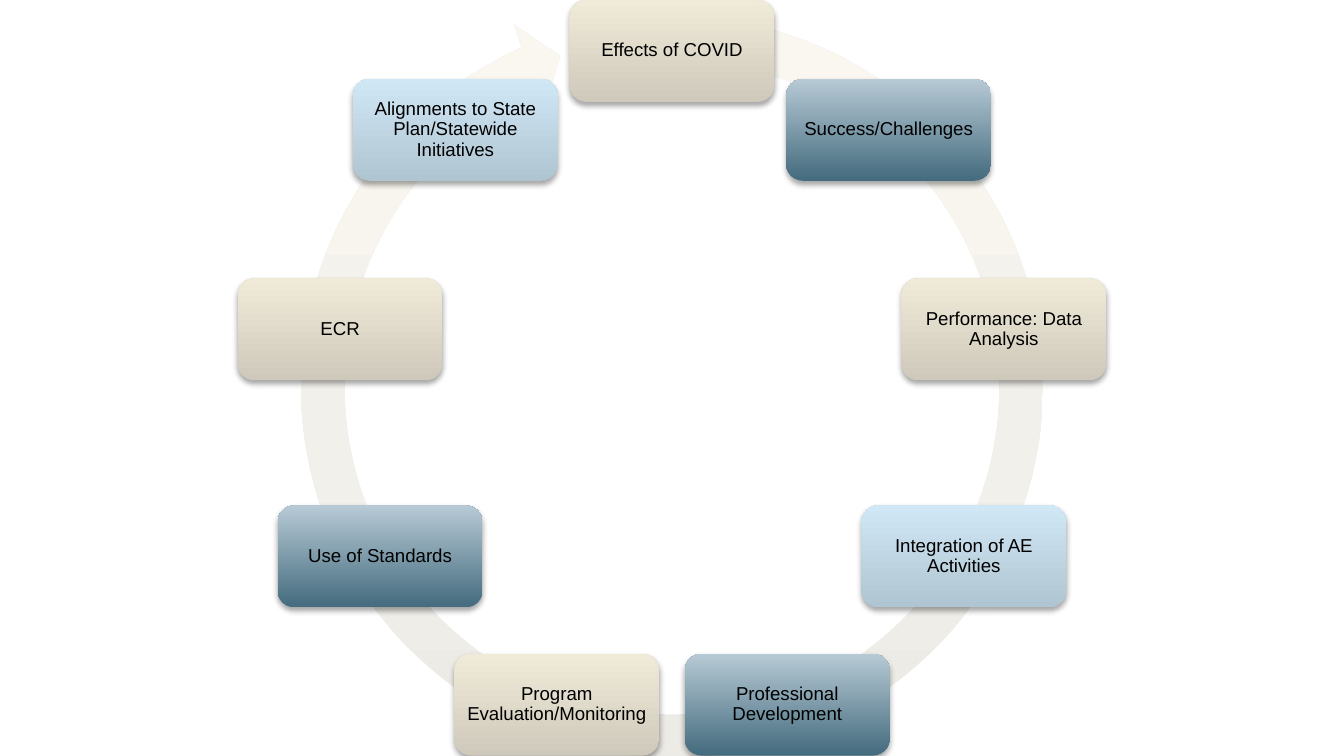
import math

from lxml import etree
from pptx import Presentation
from pptx import util as u
from pptx.dml.color import RGBColor
from pptx.enum import shapes, text
from pptx.oxml import ns

PX = u.Inches(10) / 1344
WIDE, HIGH = 1344, 756
CARD_W, CARD_H = 205, 102
MID_X, MID_Y, RADIUS = 672, 388, 337
RING = 790

BLACK = RGBColor(0x00, 0x00, 0x00)
# Each pair runs from the bottom colour to the top colour.
PALE = RGBColor(0xED, 0xEB, 0xE6), RGBColor(0xF9, 0xF7, 0xF0)
SAND = RGBColor(0xCE, 0xC9, 0xBA), RGBColor(0xF0, 0xEA, 0xD9)
TEAL = RGBColor(0x44, 0x6B, 0x7E), RGBColor(0xB7, 0xCA, 0xD5)
SKY = RGBColor(0xB0, 0xC5, 0xD2), RGBColor(0xD0, 0xE7, 0xF5)

STEPS = [
    "Effects of COVID",
    "Success/Challenges",
    "Performance: Data Analysis",
    "Integration of AE Activities",
    "Professional Development",
    "Program Evaluation/Monitoring",
    "Use of Standards",
    "ECR",
    "Alignments to State Plan/Statewide Initiatives",
]
TINTS = [SAND, TEAL, SAND, SKY, TEAL, SAND, TEAL, SAND, SKY]

SHADOW = f"""<a:outerShdw xmlns:a="{ns.nsuri('a')}" blurRad="40000" dist="23000"
  dir="5400000" rotWithShape="0"><a:srgbClr val="000000"><a:alpha val="35000"/>
  </a:srgbClr></a:outerShdw>"""


def px(n):
    return u.Emu(round(n * PX))


def add_block(kind, x, y, w, h, tint):
    """Add a borderless gradient shape centred on x, y."""
    block = slide.shapes.add_shape(kind, px(x - w / 2), px(y - h / 2), px(w), px(h))
    block.shadow.inherit = False
    block.line.fill.background()
    block.fill.gradient()
    block.fill.gradient_angle = 90
    for stop, color in zip(block.fill.gradient_stops, tint):
        stop.color.rgb = color
    return block


prs = Presentation()
prs.slide_width, prs.slide_height = px(WIDE), px(HIGH)
slide = prs.slides.add_slide(prs.slide_layouts[6])

ring = add_block(shapes.MSO_SHAPE.CIRCULAR_ARROW, MID_X, 387, RING, RING, PALE)
for i, value in enumerate([0.055, 3.307, 147.494, 168.176, 0.058]):
    ring.adjustments[i] = value

for i, (step, tint) in enumerate(zip(STEPS, TINTS)):
    angle = 2 * math.pi * i / len(STEPS)
    x = MID_X + RADIUS * math.sin(angle)
    y = MID_Y - RADIUS * math.cos(angle)
    card = add_block(shapes.MSO_SHAPE.ROUNDED_RECTANGLE, x, y, CARD_W, CARD_H, tint)
    effects = card.element.spPr.find(ns.qn("a:effectLst"))
    effects.append(etree.fromstring(SHADOW))

    frame = card.text_frame
    frame.text = step
    frame.word_wrap = True
    frame.vertical_anchor = text.MSO_ANCHOR.MIDDLE
    frame.margin_left = frame.margin_right = px(5)
    frame.margin_top = frame.margin_bottom = px(5)
    para = frame.paragraphs[0]
    para.alignment = text.PP_ALIGN.CENTER
    para.line_spacing = 0.9
    font = para.runs[0].font
    font.name, font.size = "Arial", u.Pt(10)
    font.color.rgb = BLACK

prs.save("out.pptx")
